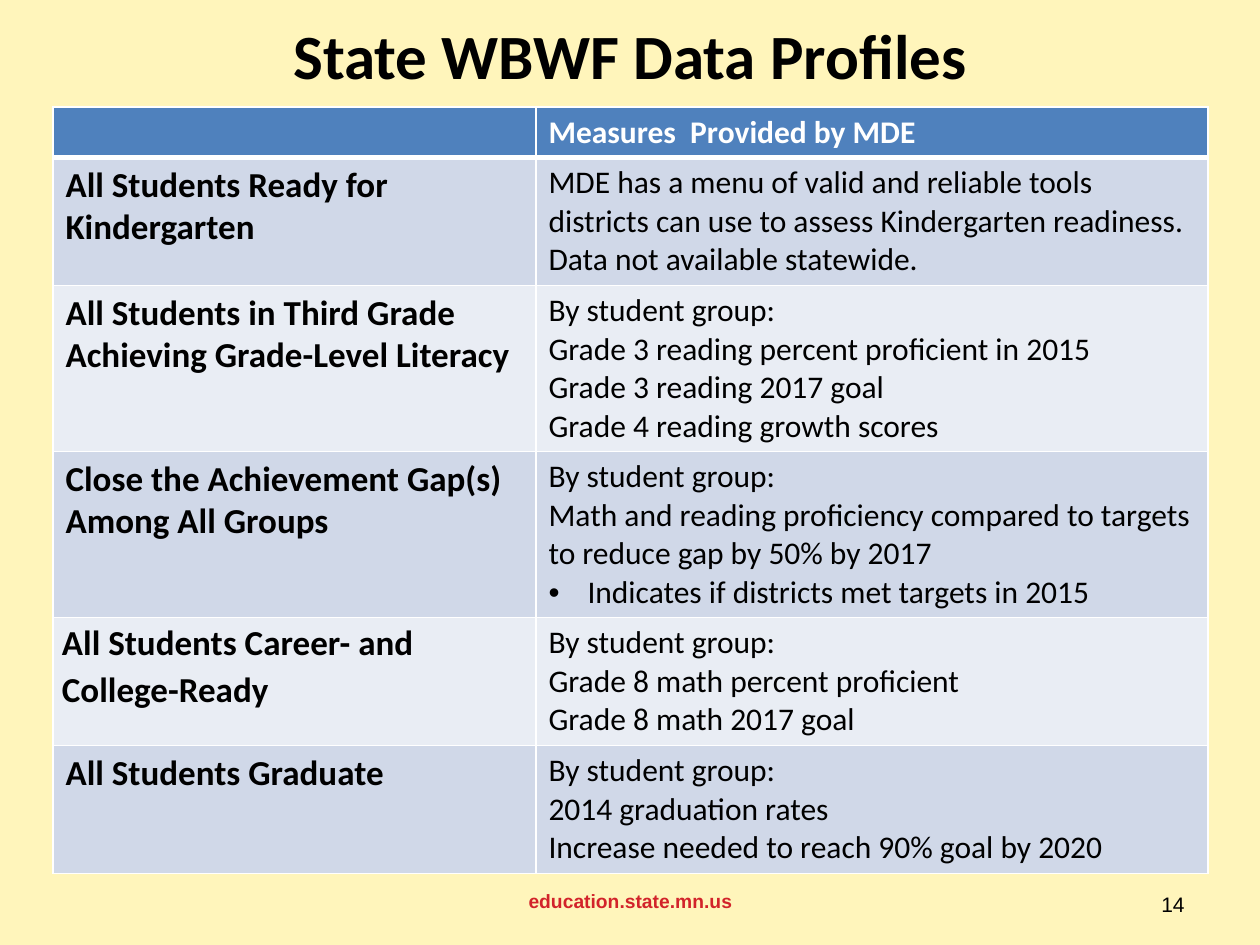
from dataclasses import dataclass

from lxml.etree import SubElement
from pptx import Presentation
from pptx.dml.color import RGBColor
from pptx.enum.text import MSO_ANCHOR as Anchor, MSO_AUTO_SIZE as AutoSize, PP_ALIGN as Align
from pptx.oxml import parse_xml
from pptx.oxml.ns import nsdecls, qn
from pptx.util import Emu, Pt


@dataclass(frozen=True)
class Theme:
    background: str = "FFF5BB"
    ink: str = "000000"
    white: str = "FFFFFF"
    red: str = "D2232A"
    header: str = "4F81BD"
    bands: tuple = ("D0D8E8", "E9EDF4")
    body_face: str = "Calibri"
    footer_face: str = "Arial"
    title_size: int = 36
    goal_size: int = 20
    measure_size: int = 18
    footer_size: int = 11
    number_size: int = 12


THEME = Theme()
EMU_PER_PX = 914400 / 126
COLUMN_WIDTHS = (483, 672)
ROW_HEIGHTS = (50, 128, 166, 166, 128, 128)
BULLET = "• "
BULLET_INDENT = 39
TIGHT_GOAL = "All Students Career- and College-Ready"
GROUP = "By student group:"

GOALS = [
    ("All Students Ready for Kindergarten",
     ["MDE has a menu of valid and reliable tools districts can use to assess "
      "Kindergarten readiness. Data not available statewide."]),
    ("All Students in Third Grade Achieving Grade-Level Literacy",
     [GROUP, "Grade 3 reading percent proficient in 2015",
      "Grade 3 reading 2017 goal", "Grade 4 reading growth scores"]),
    ("Close the Achievement Gap(s) Among All Groups",
     [GROUP, "Math and reading proficiency compared to targets to reduce gap by 50% by 2017",
      BULLET + "Indicates if districts met targets in 2015"]),
    (TIGHT_GOAL,
     [GROUP, "Grade 8 math percent proficient", "Grade 8 math 2017 goal"]),
    ("All Students Graduate",
     [GROUP, "2014 graduation rates", "Increase needed to reach 90% goal by 2020"]),
]


def px(length):
    return Emu(round(length * EMU_PER_PX))


def set_all(target, values):
    for name, value in values.items():
        setattr(target, name, value)


def place(box, left, top, width, height):
    set_all(box, dict(left=px(left), top=px(top), width=px(width), height=px(height)))


def add_bullet(paragraph):
    properties = paragraph._p.get_or_add_pPr()
    properties.set("marL", str(px(BULLET_INDENT)))
    properties.set("indent", str(-px(BULLET_INDENT)))
    SubElement(properties, qn("a:buFont")).set("typeface", "Arial")
    SubElement(properties, qn("a:buChar")).set("char", BULLET.strip())


def write(frame, lines, size, color, bold=False, face=THEME.body_face, align=Align.LEFT):
    """Fill a text frame, one paragraph per line; a leading bullet becomes a list item."""
    for index, line in enumerate(lines):
        paragraph = frame.add_paragraph() if index else frame.paragraphs[0]
        paragraph.alignment = align
        if line.startswith(BULLET):
            add_bullet(paragraph)
        run = paragraph.add_run()
        run.text = line.removeprefix(BULLET)
        set_all(run.font, dict(name=face, size=Pt(size), bold=bold))
        run.font.color.rgb = RGBColor.from_string(color)


def add_title(slide, text):
    title = slide.shapes.title
    place(title, 63, 10, 1134, 158)
    set_all(title.text_frame, dict(vertical_anchor=Anchor.TOP, word_wrap=True,
                                   auto_size=AutoSize.NONE))
    write(title.text_frame, [text], THEME.title_size, THEME.ink, True, align=Align.CENTER)


def add_footer(slide, text, box, anchor, **style):
    frame = slide.shapes.add_textbox(*map(px, box)).text_frame
    set_all(frame, dict(word_wrap=True, vertical_anchor=anchor))
    write(frame, [text], face=THEME.footer_face, **style)


def paint(cell, fill, bottom=1):
    """Set the fill and the white borders, with the bottom width in points."""
    cell.fill.solid()
    cell.fill.fore_color.rgb = RGBColor.from_string(fill)
    widths = dict(lnL=1, lnR=1, lnT=1, lnB=bottom)
    for position, (edge, width) in enumerate(widths.items()):
        cell._tc.get_or_add_tcPr().insert(position, parse_xml(
            f'<a:{edge} {nsdecls("a")} w="{Pt(width)}"><a:solidFill>'
            f'<a:srgbClr val="{THEME.white}"/></a:solidFill></a:{edge}>'))


def add_goal_table(slide):
    table = slide.shapes.add_table(
        len(ROW_HEIGHTS), len(COLUMN_WIDTHS), px(53), px(107),
        px(sum(COLUMN_WIDTHS)), px(sum(ROW_HEIGHTS))).table
    for column, width in zip(table.columns, COLUMN_WIDTHS):
        column.width = px(width)
    for row, height in zip(table.rows, ROW_HEIGHTS):
        row.height = px(height)

    for cell in table.rows[0].cells:
        paint(cell, THEME.header, bottom=3)
    write(table.cell(0, 1).text_frame, ["Measures  Provided by MDE"],
          THEME.measure_size, THEME.white, True)

    for index, (goal, measures) in enumerate(GOALS):
        goal_cell, measure_cell = table.rows[index + 1].cells
        for cell in (goal_cell, measure_cell):
            paint(cell, THEME.bands[index % 2])
        write(goal_cell.text_frame, [goal], THEME.goal_size, THEME.ink, True)
        write(measure_cell.text_frame, measures, THEME.measure_size, THEME.ink)
        if goal == TIGHT_GOAL:
            set_all(goal_cell, dict(margin_left=px(9), margin_right=px(9),
                                    margin_top=0, margin_bottom=0))
            goal_cell.text_frame.paragraphs[0].line_spacing = 1.1


def main():
    deck = Presentation()
    set_all(deck, dict(slide_width=px(1260), slide_height=px(945)))
    slide = deck.slides.add_slide(deck.slide_layouts.get_by_name("Title Only"))
    slide.background.fill.solid()
    slide.background.fill.fore_color.rgb = RGBColor.from_string(THEME.background)

    add_title(slide, "State WBWF Data Profiles")
    add_footer(slide, "education.state.mn.us", (431, 876, 399, 50), Anchor.MIDDLE,
               size=THEME.footer_size, color=THEME.red, bold=True, align=Align.CENTER)
    add_footer(slide, "14", (903, 885, 294, 50), Anchor.TOP,
               size=THEME.number_size, color=THEME.ink, align=Align.RIGHT)
    add_goal_table(slide)
    deck.save("out.pptx")


if __name__ == "__main__":
    main()
